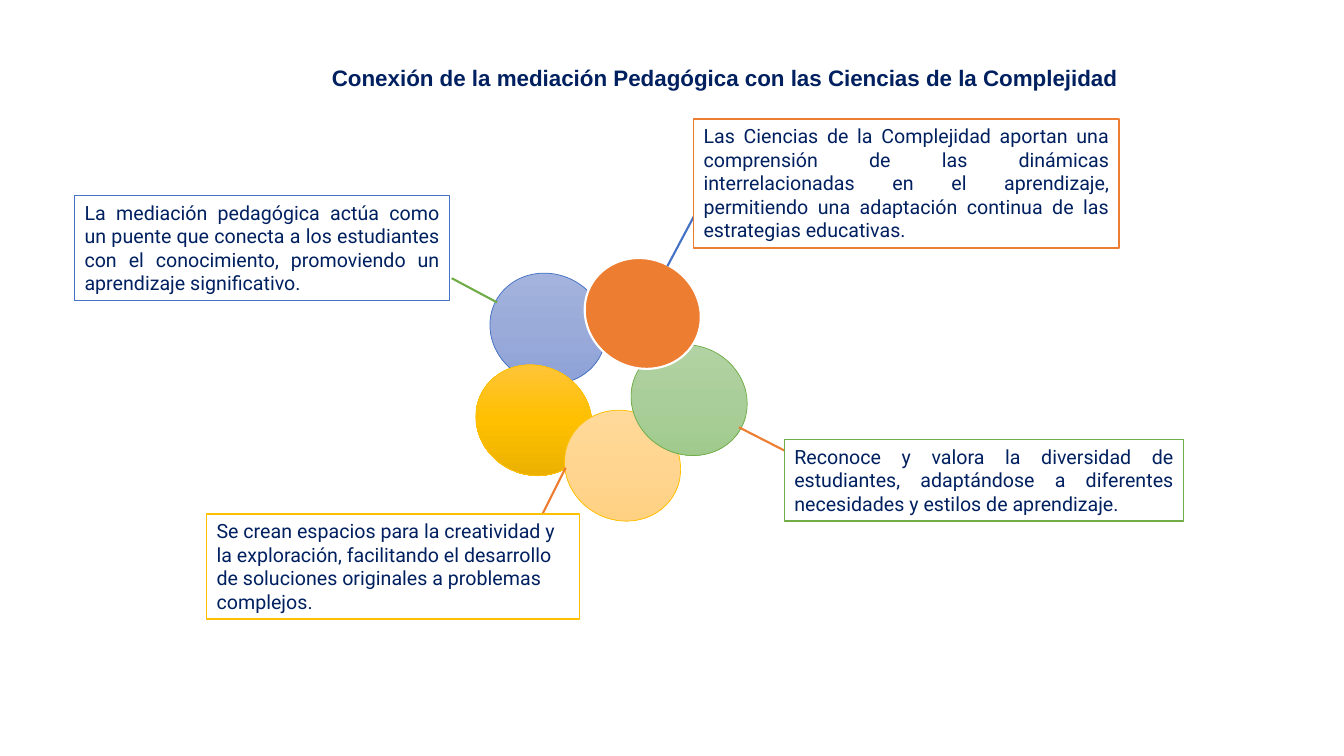
"""Build a slide on pedagogical mediation and the complexity sciences."""
import copy

import lxml.etree
import pptx
import pptx.dml.color
import pptx.enum.shapes
import pptx.enum.text
import pptx.oxml.ns
import pptx.util

PX = 9144
COLORS = {
    "navy": "002060", "white": "FFFFFF", "blue": "4472C4",
    "orange": "ED7D31", "gold": "FFC000", "green": "70AD47",
}
SHADES = {
    "blue": ("A8B7DF", "9AABD9", "889ED7"),
    "gold": ("FFC64B", "FFC000", "E3AB00"),
    "cream": ("FFDB9E", "FFD590", "FFD07C"),
    "green": ("B5D5A7", "AACE9A", "9CC987"),
}
ALIGN = pptx.enum.text.PP_ALIGN
SHAPE = pptx.enum.shapes.MSO_SHAPE


def px(*lengths):
    """Turn px lengths into EMU."""
    return [length * PX for length in lengths]


def rgb(name):
    """Return the named colour."""
    return pptx.dml.color.RGBColor.from_string(COLORS[name])


def set_line(s, color, width):
    """Give a shape or connector its line colour and width."""
    s.line.color.rgb = rgb(color)
    s.line.width = pptx.util.Pt(width)


def set_gradient(s, shades):
    """Fill a shape from top to bottom with evenly spaced shades."""
    s.fill.gradient()
    s.fill.gradient_angle = 270
    grad = s._element.spPr.find(pptx.oxml.ns.qn("a:gradFill"))
    grad.set("rotWithShape", "0")
    stops = grad.gsLst
    stops.insert(1, copy.deepcopy(stops[0]))
    for i, (stop, shade) in enumerate(zip(s.fill.gradient_stops, shades)):
        stop.position = i / (len(shades) - 1)
        stop.color.rgb = pptx.dml.color.RGBColor.from_string(shade)


def add_circle(slide, left, top, line, width=0.5, shades=None):
    """Add one tilted circle of the ring, plain when it has no shades."""
    s = slide.shapes.add_shape(SHAPE.OVAL, *px(left, top, 117, 108))
    s.rotation = 27.3
    s.shadow.inherit = False
    set_line(s, line, width)
    if shades:
        set_gradient(s, SHADES[shades])
    else:
        s.fill.solid()
        s.fill.fore_color.rgb = rgb("orange")


def add_link(slide, x1, y1, x2, y2, color):
    """Add a straight line between a circle and its box."""
    kind = pptx.enum.shapes.MSO_CONNECTOR.STRAIGHT
    s = slide.shapes.add_connector(kind, *px(x1, y1, x2, y2))
    set_line(s, color, 1.5)
    lxml.etree.SubElement(s._element.spPr, pptx.oxml.ns.qn("a:effectLst"))


def set_text(s, text, *, font="Roboto", size=14, bold=False, align=ALIGN.JUSTIFY):
    """Write one formatted paragraph into a shape."""
    tf = s.text_frame
    tf.word_wrap = True
    tf.auto_size = pptx.enum.text.MSO_AUTO_SIZE.SHAPE_TO_FIT_TEXT
    tf.vertical_anchor = pptx.enum.text.MSO_ANCHOR.TOP
    p = tf.paragraphs[0]
    p.alignment = align
    r = p.add_run()
    r.text = text
    r.font.name = font
    r.font.size = pptx.util.Pt(size)
    r.font.bold = bold
    r.font.color.rgb = rgb("navy")


def add_box(slide, left, top, width, height, color, text, **fmt):
    """Add a white outlined box with text."""
    s = slide.shapes.add_shape(SHAPE.RECTANGLE, *px(left, top, width, height))
    s.shadow.inherit = False
    s.fill.solid()
    s.fill.fore_color.rgb = rgb("white")
    set_line(s, color, 1)
    set_text(s, text, **fmt)


def add_title(slide, left, top, width, height, text):
    """Add the slide heading."""
    s = slide.shapes.add_textbox(*px(left, top, width, height))
    set_text(s, text, font="Arial", size=16, bold=True, align=ALIGN.CENTER)


def main():
    """Build and save the slide."""
    prs = pptx.Presentation()
    prs.slide_width, prs.slide_height = px(1333, 750)
    slide = prs.slides.add_slide(prs.slide_layouts[6])

    add_circle(slide, 485, 272, "blue", shades="blue")
    add_link(slide, 493, 300, 448, 276, "green")
    add_circle(slide, 471, 363, "gold", shades="gold")
    add_circle(slide, 559, 408, "gold", shades="cream")
    add_link(slide, 536, 514, 561, 464, "orange")
    add_circle(slide, 625, 343, "green", shades="green")
    add_link(slide, 778, 447, 733, 424, "orange")
    add_circle(slide, 579, 257, "white", width=1.5)
    add_link(slide, 662, 264, 688, 215, "blue")

    add_box(slide, 74, 194, 372, 104, "blue",
            "La mediación pedagógica actúa como un puente que conecta a los "
            "estudiantes con el conocimiento, promoviendo un aprendizaje "
            "significativo.")
    add_box(slide, 688, 118, 422, 128, "orange",
            "Las Ciencias de la Complejidad aportan una comprensión de las "
            "dinámicas interrelacionadas en el aprendizaje, permitiendo una "
            "adaptación continua de las estrategias educativas.")
    add_box(slide, 205, 510, 370, 104, "gold",
            "Se crean espacios para la creatividad y la exploración, "
            "facilitando el desarrollo de soluciones originales a problemas "
            "complejos.", align=ALIGN.LEFT)
    add_box(slide, 778, 436, 396, 81, "green",
            "Reconoce y valora la diversidad de estudiantes, adaptándose a "
            "diferentes necesidades y estilos de aprendizaje.")
    add_title(slide, 303, 59, 832, 37,
              "Conexión de la mediación Pedagógica con las Ciencias de la "
              "Complejidad")
    prs.save("out.pptx")


if __name__ == "__main__":
    main()
